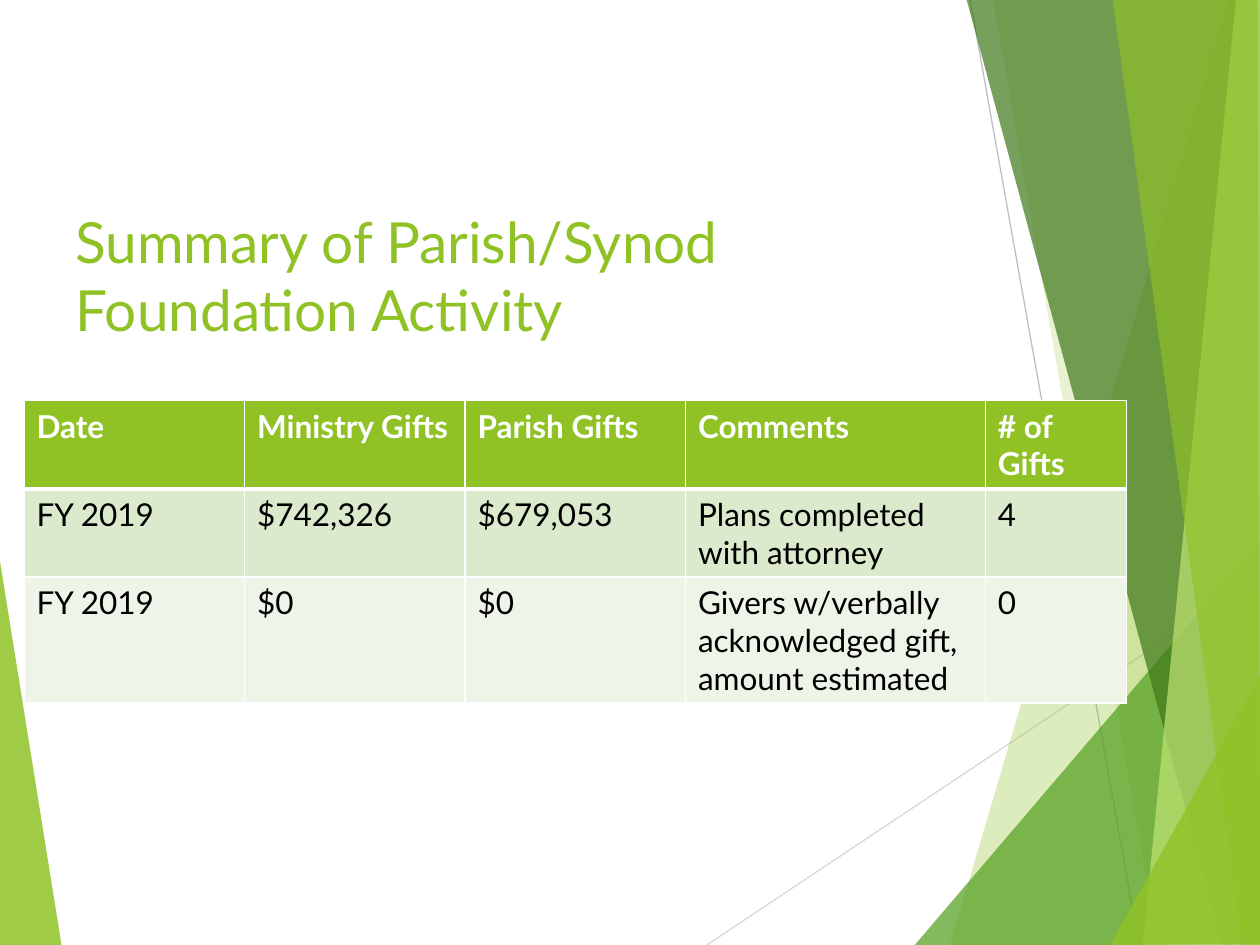
from dataclasses import dataclass

from lxml import etree
from pptx import Presentation
from pptx.dml.color import RGBColor
from pptx.enum.shapes import MSO_CONNECTOR
from pptx.enum.text import MSO_ANCHOR
from pptx.oxml.ns import qn
from pptx.util import Inches, Pt

STRAIGHT = MSO_CONNECTOR.STRAIGHT
TOP = MSO_ANCHOR.TOP
Point = tuple[float, float]


@dataclass(frozen=True)
class Theme:
    font: str = "Lato"
    title: float = 32.4
    body: float = 18
    rule: float = 0.75
    lime: str = "90C226"
    green: str = "54A021"
    forest: str = "3F7819"
    pale: str = "C0E474"
    white: str = "FFFFFF"
    black: str = "000000"
    light: str = "D9D9D9"
    gray: str = "BFBFBF"
    bands: tuple[str, str] = ("DBE9CD", "EEF4E8")


@dataclass(frozen=True)
class Facet:
    color: str
    alpha: int
    points: tuple[Point, ...]


@dataclass(frozen=True)
class Rule:
    color: str
    start: Point
    end: Point


THEME = Theme()

DECOR = (
    Facet(THEME.lime, 85, ((-0.01, 4.39), (0.49, 7.51), (-0.01, 7.5))),
    Rule(THEME.light, (5.61, 7.5), (10.01, 4.57)),
    Rule(THEME.gray, (7.7, 0), (9.04, 7.5)),
    Facet(THEME.lime, 30, ((9.75, 0), (7.54, 7.5), (10.02, 7.51), (10.01, 0.01))),
    Facet(THEME.lime, 20, ((7.88, -0.01), (9.19, 7.5), (10.01, 7.5), (10.01, -0.01))),
    Facet(THEME.green, 72, ((7.26, 7.5), (10, 4.29), (10.01, 7.5))),
    Facet(THEME.forest, 70, ((7.67, -0.01), (9.7, 7.5), (10.01, 7.49), (10.01, -0.01))),
    Facet(THEME.pale, 70, ((9.81, -0.01), (9.07, 7.5), (10.01, 7.5), (10, -0.01))),
    Facet(THEME.lime, 65, ((8.83, -0.01), (9.86, 7.5), (10, 7.5), (9.98, -0.01))),
    Facet(THEME.lime, 80, ((8.81, 7.5), (10.01, 5.35), (10.01, 7.49))),
)

WIDTHS = (1.75, 1.75, 1.75, 2.38, 1.12)
ROWS = (
    ("Date", "Ministry Gifts", "Parish Gifts", "Comments", "# of Gifts"),
    ("FY 2019", "$742,326", "$679,053", "Plans completed with attorney", "4"),
    ("FY 2019", "$0", "$0", "Givers w/verbally acknowledged gift, amount estimated", "0"),
)


def paint(fill, color: str) -> None:
    fill.solid()
    fill.fore_color.rgb = RGBColor.from_string(color)


def write(frame, text: str, size: float, color: str, bold: bool = False) -> None:
    run = frame.paragraphs[0].add_run()
    run.text = text
    font = run.font
    font.name, font.size, font.bold = THEME.font, Pt(size), bold
    font.color.rgb = RGBColor.from_string(color)


def draw_facet(slide, facet: Facet) -> None:
    first, *rest = [(Inches(x), Inches(y)) for x, y in facet.points]
    pen = slide.shapes.build_freeform(*first)
    pen.add_line_segments(rest, close=True)
    shape = pen.convert_to_shape()
    shape.shadow.inherit = False
    shape.line.fill.background()
    paint(shape.fill, facet.color)
    tint = shape.fill._xPr.find(qn("a:solidFill"))[0]
    etree.SubElement(tint, qn("a:alpha"), val=str(facet.alpha * 1000))


def draw_rule(slide, rule: Rule) -> None:
    ends = [Inches(n) for n in rule.start + rule.end]
    line = slide.shapes.add_connector(STRAIGHT, *ends)
    line.line.width = Pt(THEME.rule)
    paint(line.line.fill, rule.color)
    etree.SubElement(line._element.spPr, qn("a:effectLst"))


def draw_title(slide, text: str) -> None:
    box = slide.shapes.add_textbox(Inches(0.5), Inches(1.59), Inches(7.1), Inches(1.25))
    frame = box.text_frame
    frame.word_wrap = True
    frame.vertical_anchor = TOP
    write(frame, text, THEME.title, THEME.lime)


def edge(cell, side: str, width: float) -> None:
    props = cell._tc.get_or_add_tcPr()
    line = etree.SubElement(props, qn(f"a:ln{side}"), w=str(Pt(width)))
    fill = etree.SubElement(line, qn("a:solidFill"))
    etree.SubElement(fill, qn("a:srgbClr"), val=THEME.white)


def draw_table(slide) -> None:
    shape = slide.shapes.add_table(
        len(ROWS), len(WIDTHS), Inches(0.19), Inches(3.18), Inches(sum(WIDTHS)), Inches(2.4)
    )
    table = shape.table
    table.horz_banding = False
    for column, width in zip(table.columns, WIDTHS):
        column.width = Inches(width)
    for i, texts in enumerate(ROWS):
        table.rows[i].height = Inches(0.41)
        head = i == 0
        back = THEME.lime if head else THEME.bands[i - 1]
        ink = THEME.white if head else THEME.black
        for j, text in enumerate(texts):
            cell = table.cell(i, j)
            for side in "LRTB":
                thick = (i, side) in ((0, "B"), (1, "T"))
                edge(cell, side, 3 if thick else 1)
            paint(cell.fill, back)
            write(cell.text_frame, text, THEME.body, ink, head)
    shape.height = Inches(2.4)


def main() -> None:
    deck = Presentation()
    deck.slide_width, deck.slide_height = Inches(10), Inches(7.5)
    slide = deck.slides.add_slide(deck.slide_layouts[6])
    paint(slide.background.fill, THEME.white)
    for item in DECOR:
        if isinstance(item, Facet):
            draw_facet(slide, item)
        else:
            draw_rule(slide, item)
    draw_title(slide, "Summary of Parish/Synod Foundation Activity")
    draw_table(slide)
    deck.save("out.pptx")


if __name__ == "__main__":
    main()
